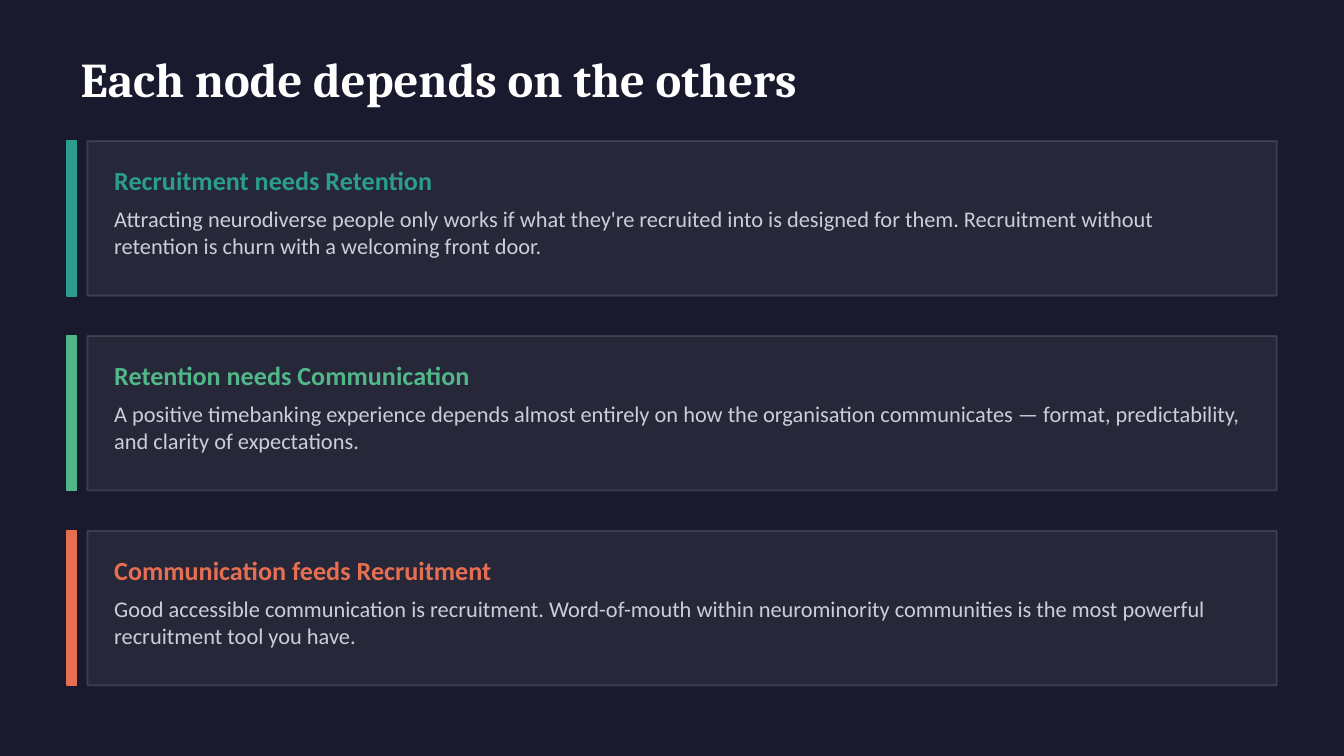
from lxml.etree import SubElement
from pptx import Presentation
from pptx.dml.color import RGBColor
from pptx.enum.shapes import MSO_SHAPE
from pptx.enum.text import MSO_ANCHOR, MSO_AUTO_SIZE, PP_ALIGN
from pptx.oxml.ns import qn
from pptx.util import Inches, Pt

COLORS = {
    "background": "1A1A2E",
    "white": "FFFFFF",
    "body": "CCCCDD",
    "teal": "2A9D8F",
    "green": "52B788",
    "orange": "E76F51",
}

CARDS = [
    ("teal", "Recruitment needs Retention",
     "Attracting neurodiverse people only works if what they're recruited into is "
     "designed for them. Recruitment without retention is churn with a welcoming front door."),
    ("green", "Retention needs Communication",
     "A positive timebanking experience depends almost entirely on how the organisation "
     "communicates — format, predictability, and clarity of expectations."),
    ("orange", "Communication feeds Recruitment",
     "Good accessible communication is recruitment. Word-of-mouth within neurominority "
     "communities is the most powerful recruitment tool you have."),
]


def rgb(name):
    return RGBColor.from_string(COLORS[name])


def box(left, top, width, height):
    return [Inches(value) for value in (left, top, width, height)]


def write_text(shape, text, size, color, font_name, bold=False, anchor=MSO_ANCHOR.MIDDLE):
    text_frame = shape.text_frame
    text_frame.text = text
    text_frame.word_wrap = True
    text_frame.auto_size = MSO_AUTO_SIZE.NONE
    text_frame.vertical_anchor = anchor
    paragraph = text_frame.paragraphs[0]
    paragraph.alignment = PP_ALIGN.LEFT
    font = paragraph.runs[0].font
    font.name = font_name
    font.size = Pt(size)
    font.bold = bold
    font.color.rgb = rgb(color)


def add_title(slide, left, top, width, height):
    title = slide.shapes.title
    title.left, title.top, title.width, title.height = box(left, top, width, height)
    write_text(title, "Each node depends on the others", 26, "white", "Cambria", bold=True)


def add_rectangle(slide, left, top, width, height, color, opacities=None):
    shape = slide.shapes.add_shape(MSO_SHAPE.RECTANGLE, *box(left, top, width, height))
    shape.shadow.inherit = False
    shape.fill.solid()
    shape.fill.fore_color.rgb = rgb(color)
    shape.line.color.rgb = rgb(color)
    shape.line.width = Pt(1)
    if opacities:
        for element, percent in zip(shape._element.spPr.iter(qn("a:srgbClr")), opacities):
            SubElement(element, qn("a:alpha"), val=str(percent * 1000))


def add_label(slide, left, top, width, height, *text_arguments, **text_options):
    label = slide.shapes.add_textbox(*box(left, top, width, height))
    text_frame = label.text_frame
    text_frame.margin_left = text_frame.margin_right = 0
    text_frame.margin_top = text_frame.margin_bottom = 0
    write_text(label, *text_arguments, **text_options)


def add_card(slide, left, top, width, height, accent, heading, body):
    add_rectangle(slide, left, top, 0.07, height, accent)
    add_rectangle(slide, left + 0.15, top, width - 0.15, height, "white", opacities=(6, 12))
    text_left, text_width = left + 0.35, width - 0.6
    add_label(slide, text_left, top + 0.1, text_width, 0.38,
              heading, 14, accent, "Calibri", bold=True)
    add_label(slide, text_left, top + 0.48, text_width, 0.6,
              body, 12, "body", "Calibri", anchor=MSO_ANCHOR.TOP)


def main():
    presentation = Presentation()
    presentation.slide_width = Inches(10)
    presentation.slide_height = Inches(10 * 9 / 16)
    slide = presentation.slides.add_slide(presentation.slide_layouts[5])
    slide.background.fill.solid()
    slide.background.fill.fore_color.rgb = rgb("background")

    add_title(slide, 0.5, 0.28, 9, 0.6)
    card_height, gap = 1.15, 0.3
    for index, card in enumerate(CARDS):
        add_card(slide, 0.5, 1.05 + index * (card_height + gap), 9, card_height, *card)

    presentation.save("out.pptx")


if __name__ == "__main__":
    main()
